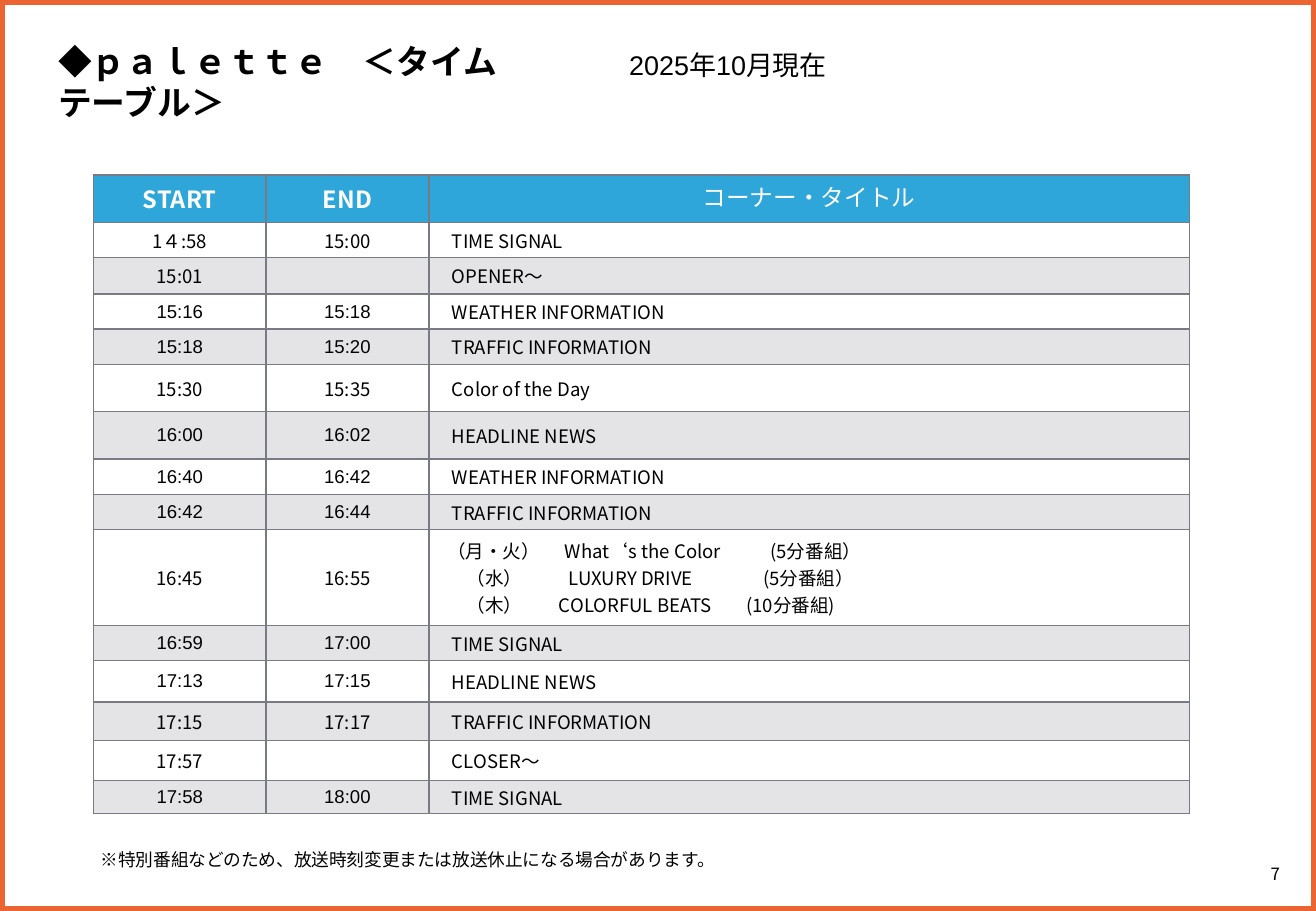
from lxml import etree
from pptx import Presentation
from pptx.dml.color import RGBColor
from pptx.enum.shapes import MSO_SHAPE as SHAPE
from pptx.enum.text import MSO_ANCHOR as ANCHOR, PP_ALIGN as ALIGN
from pptx.oxml.ns import qn
from pptx.util import Inches, Pt

COLORS = {"frame": "EB6432", "header": "2EA6DA", "grid": "797B84",
          "text": "000000", "white": "FFFFFF"}
NOTO, ARIAL = "Noto Sans CJK JP", "Arial"

# Start, end, corner title, font of the times, row height
PROGRAM = [
    ("1４:58", "15:00", "TIME SIGNAL", NOTO, 0.29),
    ("15:01", "", "OPENER〜", NOTO, 0.29),
    ("15:16", "15:18", "WEATHER INFORMATION", ARIAL, 0.29),
    ("15:18", "15:20", "TRAFFIC INFORMATION", ARIAL, 0.29),
    ("15:30", "15:35", "Color of the Day", NOTO, 0.39),
    ("16:00", "16:02", "HEADLINE NEWS", ARIAL, 0.39),
    ("16:40", "16:42", "WEATHER INFORMATION", ARIAL, 0.29),
    ("16:42", "16:44", "TRAFFIC INFORMATION", ARIAL, 0.29),
    ("16:45", "16:55", None, NOTO, 0.79),
    ("16:59", "17:00", "TIME SIGNAL", ARIAL, 0.29),
    ("17:13", "17:15", "HEADLINE NEWS", ARIAL, 0.34),
    ("17:15", "17:17", "TRAFFIC INFORMATION", NOTO, 0.32),
    ("17:57", "", "CLOSER〜", NOTO, 0.33),
    ("17:58", "18:00", "TIME SIGNAL", ARIAL, 0.27),
]
# Weekday, corner, length, and the tab stop of each
WEEKDAY_CORNERS = [
    (("（月・火）", "What‘s the Color", "(5分番組）"), (0.15, 1.12, 2.81)),
    (("（水）", "LUXURY DRIVE", "(5分番組）"), (0.31, 1.15, 2.75)),
    (("（木）", "COLORFUL BEATS", "(10分番組)"), (0.31, 1.07, 2.61)),
]
HEADER_HEIGHT = 0.39
COLUMN_WIDTHS = (1.42, 1.34, 6.26)
TITLE_INDENT = 0.19


def rgb(name):
    return RGBColor.from_string(COLORS[name])


def add_run(paragraph, text, size, font=NOTO, color="text", bold=False):
    run = paragraph.add_run()
    run.text = text
    run.font.size = Pt(size)
    run.font.name = font
    run.font.bold = bold
    run.font.color.rgb = rgb(color)
    latin = run.font._element.find(qn("a:latin"))
    east_asian = etree.Element(qn("a:ea"), typeface=font)
    latin.addnext(east_asian)


def add_text(slide, left, top, width, height, anchor=ANCHOR.TOP):
    frame = slide.shapes.add_textbox(
        Inches(left), Inches(top), Inches(width), Inches(height)).text_frame
    frame.word_wrap = True
    frame.vertical_anchor = anchor
    return frame.paragraphs[0]


def add_frame(slide, width, height):
    frame = slide.shapes.add_shape(SHAPE.RECTANGLE, 0, 0, width, height)
    frame.shadow.inherit = False
    frame.fill.background()
    frame.line.color.rgb = rgb("frame")
    frame.line.width = Pt(6)


def add_tabs(paragraph, stops):
    tabs = etree.SubElement(paragraph._p.get_or_add_pPr(), qn("a:tabLst"))
    for stop in stops:
        etree.SubElement(tabs, qn("a:tab"), pos=str(Inches(stop)), algn="l")


def style_cell(cell, fill=None, alpha=None):
    cell.margin_left = cell.margin_right = 0
    cell.margin_top = cell.margin_bottom = 0
    cell.vertical_anchor = ANCHOR.MIDDLE
    # Borders go before the fill in the cell properties
    properties = cell._tc.get_or_add_tcPr()
    for side in ("lnL", "lnR", "lnT", "lnB"):
        line = etree.SubElement(properties, qn("a:" + side), w=str(Pt(1)))
        solid = etree.SubElement(line, qn("a:solidFill"))
        etree.SubElement(solid, qn("a:srgbClr"), val=COLORS["grid"])
    if fill is None:
        cell.fill.background()
        return
    cell.fill.solid()
    cell.fill.fore_color.rgb = rgb(fill)
    if alpha is not None:
        shade = properties.find(qn("a:solidFill")).find(qn("a:srgbClr"))
        etree.SubElement(shade, qn("a:alpha"), val=str(alpha * 1000))


def write_centred(cell, text, size, **style):
    if text:
        paragraph = cell.text_frame.paragraphs[0]
        paragraph.alignment = ALIGN.CENTER
        add_run(paragraph, text, size, **style)


def write_weekday_corners(cell):
    frame = cell.text_frame
    for index, (parts, stops) in enumerate(WEEKDAY_CORNERS):
        paragraph = frame.add_paragraph() if index else frame.paragraphs[0]
        add_tabs(paragraph, stops)
        for part in parts:
            add_run(paragraph, "\t" + part, 11)


def add_timetable(slide):
    heights = [HEADER_HEIGHT] + [row[-1] for row in PROGRAM]
    timetable = slide.shapes.add_table(
        len(heights), len(COLUMN_WIDTHS), Inches(0.77), Inches(1.44),
        Inches(sum(COLUMN_WIDTHS)), Inches(sum(heights))).table
    timetable.first_row = timetable.horz_banding = False
    for column, width in zip(timetable.columns, COLUMN_WIDTHS):
        column.width = Inches(width)
    for row, height in zip(timetable.rows, heights):
        row.height = Inches(height)

    # Header row
    headings = (("START", NOTO, True), ("END", NOTO, True),
                ("コーナー・タイトル", ARIAL, False))
    for cell, (text, font, bold) in zip(timetable.rows[0].cells, headings):
        style_cell(cell, "header")
        write_centred(cell, text, 14, font=font, color="white", bold=bold)

    # Program rows, every second one shaded
    for number, (start, end, title, font, _) in enumerate(PROGRAM, 1):
        start_cell, end_cell, title_cell = timetable.rows[number].cells
        for cell in (start_cell, end_cell, title_cell):
            if number % 2:
                style_cell(cell)
            else:
                style_cell(cell, "grid", alpha=20)
        write_centred(start_cell, start, 11, font=font)
        write_centred(end_cell, end, 11, font=font)
        if title is None:
            write_weekday_corners(title_cell)
        else:
            title_cell.margin_left = Inches(TITLE_INDENT)
            add_run(title_cell.text_frame.paragraphs[0], title, 11)


def main():
    deck = Presentation()
    deck.slide_width, deck.slide_height = Inches(10.83), Inches(7.5)
    slide = deck.slides.add_slide(deck.slide_layouts[6])

    # Page number and frame
    page = add_text(slide, 10.16, 7.02, 0.67, 0.35, ANCHOR.MIDDLE)
    page.alignment = ALIGN.CENTER
    add_run(page, "7", 10)
    add_frame(slide, deck.slide_width, deck.slide_height)

    # Heading and date
    heading = add_text(slide, 0.38, 0.29, 4.09, 0.44)
    add_run(heading, "◆", 20)
    add_run(heading, "ｐａｌｅｔｔｅ　＜タイムテーブル＞", 20, bold=True)
    date = add_text(slide, 5.08, 0.35, 2.13, 0.37)
    add_run(date, "2025年10月現在", 16, font=ARIAL)

    # Timetable and footnote
    add_timetable(slide)
    footnote = add_text(slide, 0.73, 6.94, 8.62, 0.28)
    add_run(footnote, "※特別番組などのため、放送時刻変更または放送休止になる場合があります。", 10.5)

    deck.save("out.pptx")


if __name__ == "__main__":
    main()
